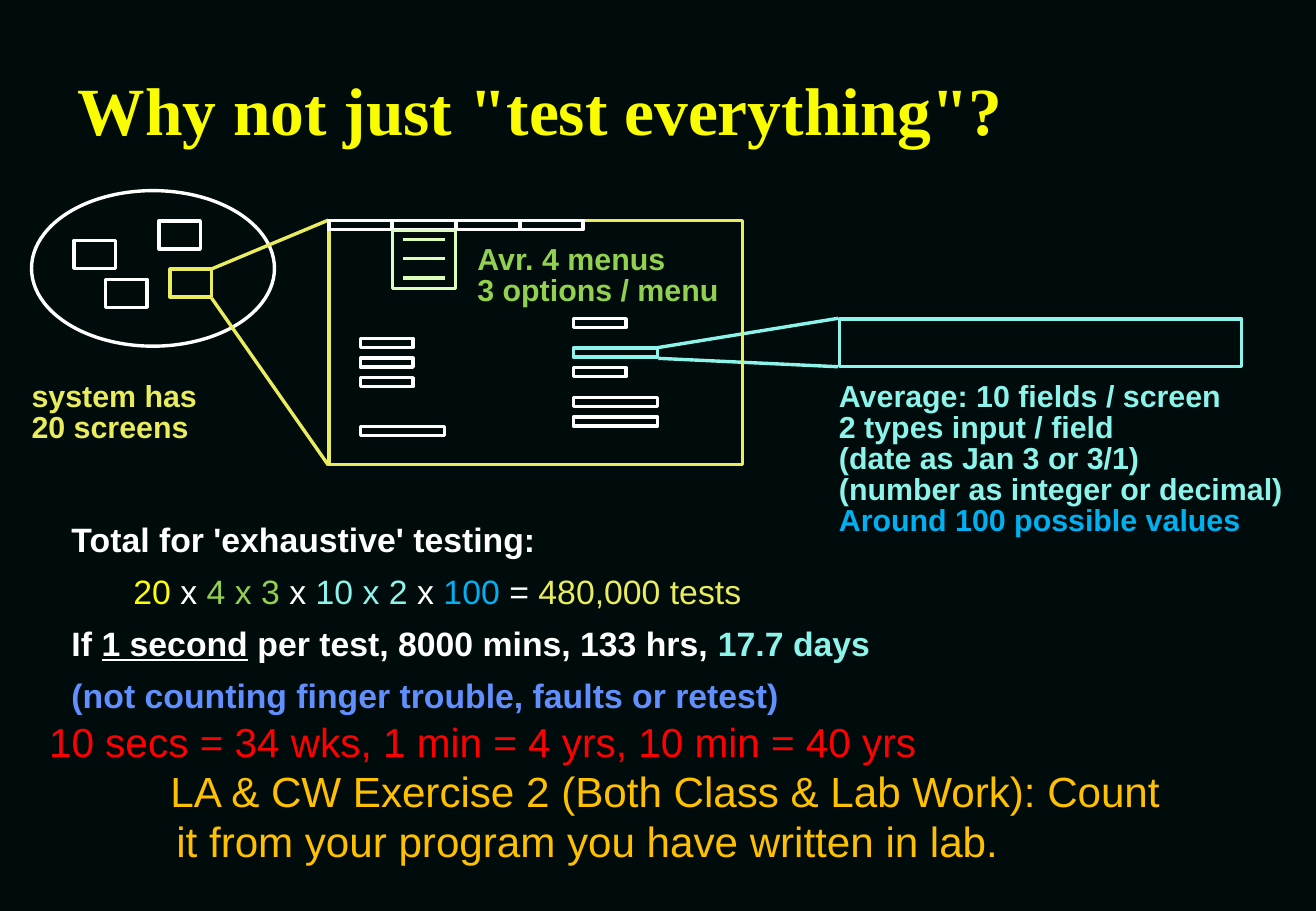
import pptx
import pptx.dml.color
import pptx.enum.shapes
import pptx.enum.text
import pptx.oxml.ns
import pptx.util
from lxml import etree

Pt = pptx.util.Pt
SHAPES = pptx.enum.shapes.MSO_SHAPE
ANCHOR = pptx.enum.text.MSO_ANCHOR

COLORS = {
    "night": "000C0B", "title": "FAFD00", "white": "FFFFFF", "screen": "EAEC5E",
    "field": "8CF4EA", "menu": "DBFFB8", "green": "92D050", "blue": "00B0F0",
    "yellow": "FFFF00", "violet": "618FFD", "red": "FF0000", "orange": "FFC000",
}


def rgb(name):
    return pptx.dml.color.RGBColor.from_string(COLORS[name])


class SlideBuilder:
    """Holds the style and the current page; all lengths are in points."""

    line_width = 2
    font = "Arial"

    def __init__(self, deck):
        self.page = deck.slides.add_slide(deck.slide_layouts[6])
        fill = self.page.background.fill
        fill.solid()
        fill.fore_color.rgb = rgb("night")

    def outline(self, left, top, width, height, color="white", kind=SHAPES.RECTANGLE):
        box = self.page.shapes.add_shape(kind, Pt(left), Pt(top), Pt(width), Pt(height))
        box.shadow.inherit = False
        box.fill.background()
        box.line.color.rgb = rgb(color)
        box.line.width = Pt(self.line_width)

    def line(self, x1, y1, x2, y2, color):
        link = self.page.shapes.add_connector(
            pptx.enum.shapes.MSO_CONNECTOR.STRAIGHT, Pt(x1), Pt(y1), Pt(x2), Pt(y2))
        link.line.color.rgb = rgb(color)
        link.line.width = Pt(self.line_width)
        etree.SubElement(link._element.spPr, pptx.oxml.ns.qn("a:effectLst"))

    def text(self, left, top, width, height, lines, margins=(5, 2.2),
             anchor=ANCHOR.TOP, indents=None, spacing=None, **font):
        """Each line is a list of (text, color, font changes) spans."""
        box = self.page.shapes.add_textbox(Pt(left), Pt(top), Pt(width), Pt(height))
        frame = box.text_frame
        side, edge = margins
        frame_format = {
            "word_wrap": True, "vertical_anchor": anchor,
            "margin_left": Pt(side), "margin_right": Pt(side),
            "margin_top": Pt(edge), "margin_bottom": Pt(edge),
        }
        for name, value in frame_format.items():
            setattr(frame, name, value)
        for index, spans in enumerate(lines):
            para = frame.add_paragraph() if index else frame.paragraphs[0]
            for name, value in (spacing or {}).items():
                setattr(para, name, value)
            if indents:
                para._p.get_or_add_pPr().set("marL", str(Pt(indents[index])))
            for words, color, changes in spans:
                span = para.add_run()
                span.text = words
                span.font.color.rgb = rgb(color)
                for name, value in {"name": self.font, **font, **changes}.items():
                    setattr(span.font, name, value)

    def label(self, left, top, width, height, lines):
        self.text(left, top, width, height, [[(words, color, {})] for words, color in lines],
                  spacing={"line_spacing": 0.85}, size=Pt(18), bold=True)


def main():
    deck = pptx.Presentation()
    deck.slide_width, deck.slide_height = Pt(780), Pt(540)
    slide = SlideBuilder(deck)

    # Title
    slide.text(39, 42, 663, 48, [[('Why not just "test everything"?', "title", {})]],
               margins=(7.2, 3.6), anchor=ANCHOR.MIDDLE, spacing={"line_spacing": 0.98},
               name="Times New Roman", size=Pt(40), bold=True)

    # System with its screens
    for left, top, color in ((44, 142.5, "white"), (62.6, 165.6, "white"),
                             (100.8, 159.6, "screen"), (94.3, 131, "white")):
        slide.outline(left, top, 24.5, 16.6, color)
    slide.outline(18.7, 113, 144, 92.2, kind=SHAPES.OVAL)
    slide.label(13.7, 224.6, 115, 42.5,
                [("system has", "screen"), ("20 screens", "screen")])

    # One field, enlarged
    slide.outline(497.5, 189, 238.5, 28.2, "field")
    slide.line(390.2, 206, 496.8, 188.7, "field")
    slide.line(390.2, 212.4, 496.8, 217.4, "field")
    slide.label(492.3, 224.6, 280, 96.5, [
        ("Average: 10 fields / screen", "field"),
        ("2 types input / field", "field"),
        ("(date as Jan 3 or 3/1)", "field"),
        ("(number as integer or decimal)", "field"),
        ("Around 100 possible values", "blue"),
    ])

    # One screen, enlarged
    slide.line(125.5, 159.4, 194.6, 130.5, "screen")
    slide.line(125.5, 176.8, 194.6, 275.7, "screen")
    slide.outline(195, 130.7, 245, 144.6, "screen")

    # Menu bar and the open menu
    for number in range(4):
        slide.outline(195 + 37.8 * number, 130.7, 37.3, 5.3)
    slide.outline(232.8, 136.6, 37.3, 34.3, "menu")
    for number in range(3):
        y = 141.9 + 11.5 * number
        slide.line(239, y, 264, y, "menu")
    slide.label(278, 143.3, 158, 42.5,
                [("Avr. 4 menus", "green"), ("3 options / menu", "green")])

    # Fields on the screen
    short, long = 31.3, 50
    for left, top, width, color in (
            (213.6, 200.7, short, "white"), (213.6, 212.3, short, "white"),
            (213.6, 223.9, short, "white"), (213.6, 252.9, long, "white"),
            (339.8, 188.9, short, "white"), (339.8, 206.4, long, "field"),
            (339.8, 218, short, "white"), (339.8, 235.6, long, "white"),
            (339.8, 247.2, long, "white")):
        slide.outline(left, top, width, 5.3, color)

    # Total count
    plain = {"bold": False}
    factors = [("20", "yellow"), (" x ", "white"), ("4 x 3 ", "green"), ("x ", "white"),
               ("10 x 2", "field"), (" x ", "white"), ("100", "blue"), (" = ", "white"),
               ("480,000 tests", "screen")]
    slide.text(37.4, 308.5, 691, 120, [
        [("Total for 'exhaustive' testing:", "white", {})],
        [(words, color, plain) for words, color in factors],
        [("If ", "white", {}), ("1 second", "white", {"underline": True}),
         (" per test, 8000 mins, 133 hrs, ", "white", {}), ("17.7 days", "field", {})],
        [("(not counting finger trouble, faults or retest)", "violet", {})],
    ], indents=(0, 36.7, 0, 0), size=Pt(20), bold=True,
        spacing={"line_spacing": 0.88, "space_after": Pt(9.6)})

    # Longer times and exercise
    exercise = {"size": Pt(25)}
    slide.text(22, 421.2, 690, 97, [
        [("10 secs = 34 wks, 1 min = 4 yrs, 10 min = 40 yrs", "red", {})],
        [("LA & CW Exercise 2 (Both Class & Lab Work): Count", "orange", exercise)],
        [("it from your program you have written in lab.", "orange", exercise)],
    ], margins=(7.2, 3.6), indents=(0, 72, 75.5), size=Pt(24))

    deck.save("out.pptx")


if __name__ == "__main__":
    main()
